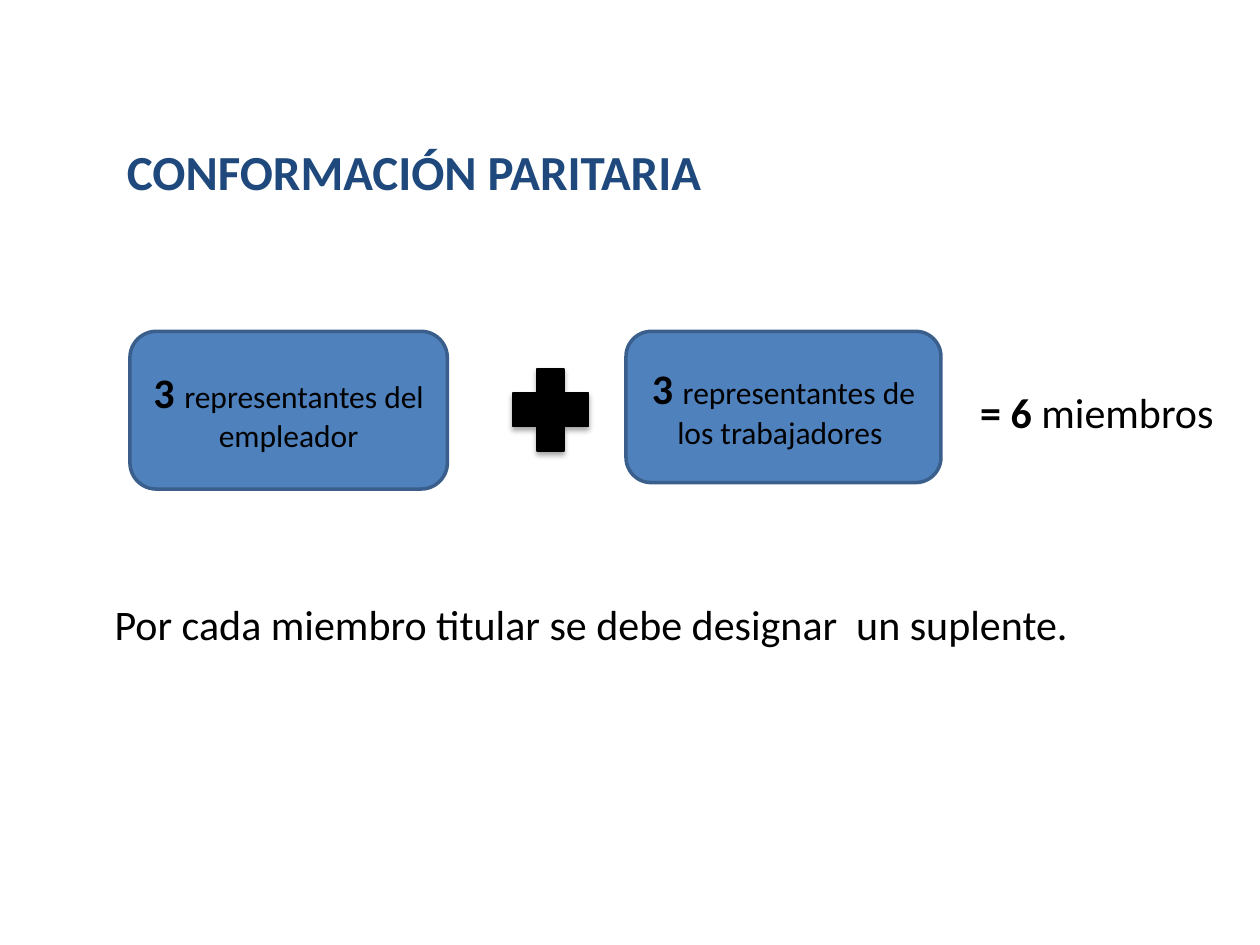
"""Build the slide on the equal make-up of the committee."""
from pptx import Presentation
from pptx.dml.color import RGBColor
from pptx.enum import shapes, text
from pptx.util import Cm, Pt

BLACK, NAVY, BLUE, EDGE = "000000", "1F497D", "4F81BD", "3A5F8C"


def paint(color, tone):
    color.rgb = RGBColor.from_string(tone)


def write(frame, runs, tone=BLACK):
    par = frame.paragraphs[0]
    par.font.name = "Calibri"
    paint(par.font.color, tone)
    for words, size, bold in runs:
        run = par.add_run()
        run.text = words
        run.font.size = Pt(size)
        run.font.bold = bold
    return par


def add_label(slide, area, runs, tone=BLACK, wrap=True):
    frame = slide.shapes.add_textbox(*map(Cm, area)).text_frame
    frame.word_wrap = wrap
    frame.auto_size = text.MSO_AUTO_SIZE.SHAPE_TO_FIT_TEXT
    return write(frame, runs, tone)


def add_form(slide, kind, area, fill, edge, width):
    form = slide.shapes.add_shape(kind, *map(Cm, area))
    form.fill.solid()
    paint(form.fill.fore_color, fill)
    paint(form.line.color, edge)
    form.line.width = Pt(width)
    return form


def add_group(slide, area, words):
    kind = shapes.MSO_SHAPE.ROUNDED_RECTANGLE
    form = add_form(slide, kind, area, BLUE, EDGE, 2)
    form.shadow.inherit = False
    form.text_frame.vertical_anchor = text.MSO_ANCHOR.MIDDLE
    par = write(form.text_frame, [("3 ", 24, True), (words, 18, False)])
    par.alignment = text.PP_ALIGN.CENTER


def add_plus(slide, area):
    form = add_form(slide, shapes.MSO_SHAPE.CROSS, area, BLACK, BLACK, 0.75)
    form.adjustments[0] = 0.32


def main():
    deck = Presentation()
    deck.slide_width, deck.slide_height = Cm(25.4), Cm(19.05)
    slide = deck.slides.add_slide(deck.slide_layouts[6])

    add_label(slide, (2.31, 2.72, 12.22, 1.45),
              [("CONFORMACIÓN PARITARIA", 28, True)], NAVY, wrap=False)
    add_group(slide, (2.62, 6.68, 6.4, 3.18), "representantes del empleador")
    add_group(slide, (12.62, 6.68, 6.35, 3.05),
              "representantes de los trabajadores ")
    add_plus(slide, (10.34, 7.44, 1.52, 1.65))
    add_label(slide, (19.51, 7.67, 5.59, 1.27),
              [("= 6 ", 24, True), ("miembros", 24, False)])
    note = add_label(
        slide, (0.79, 11.94, 22.15, 1.27),
        [("Por cada miembro titular se debe designar  un suplente.", 24, False)])
    note.level = 1
    note._p.get_or_add_pPr().set("marL", str(Cm(1.27)))

    deck.save("out.pptx")


if __name__ == "__main__":
    main()
